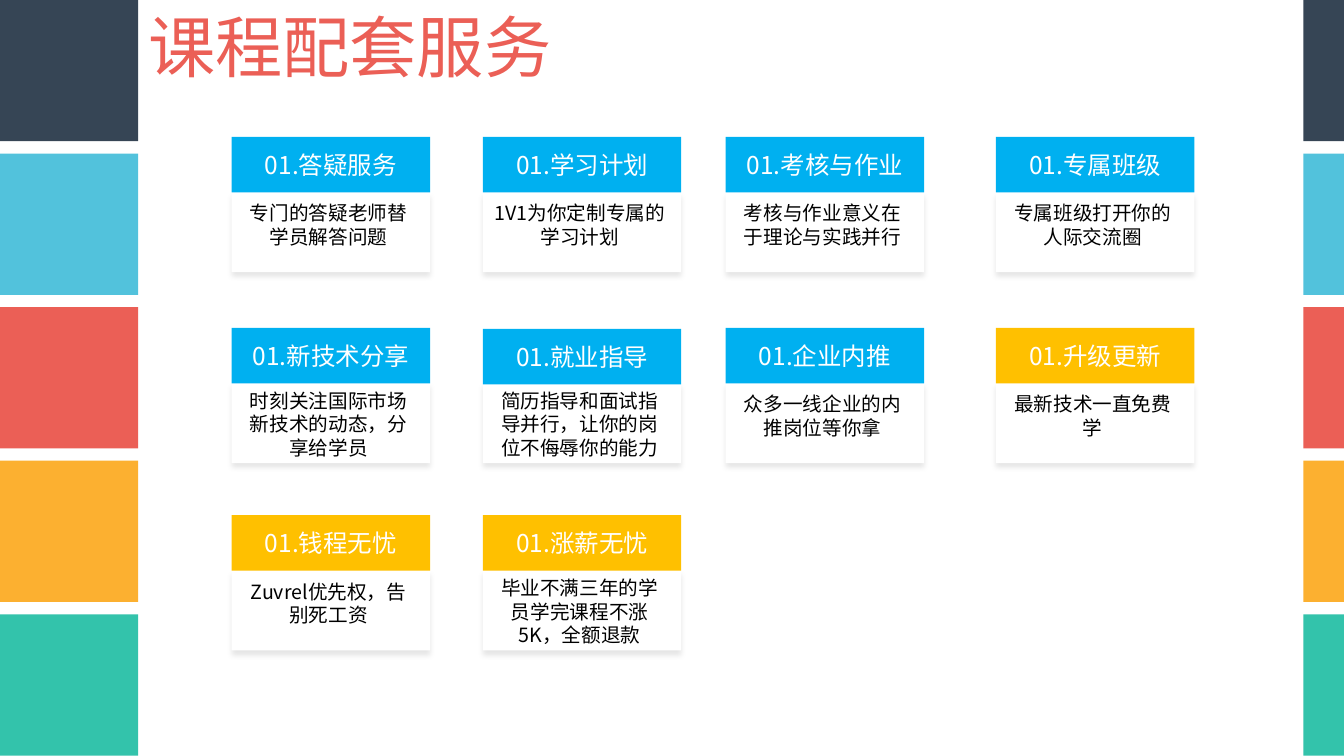
from typing import NamedTuple

from lxml import etree
from pptx import Presentation
from pptx.dml.color import RGBColor
from pptx.enum.shapes import MSO_SHAPE
from pptx.enum.text import MSO_ANCHOR, MSO_AUTO_SIZE, PP_ALIGN
from pptx.oxml.ns import qn
from pptx.util import Cm, Pt

RECT = MSO_SHAPE.RECTANGLE
TOP, MIDDLE = MSO_ANCHOR.TOP, MSO_ANCHOR.MIDDLE
LEFT, CENTER = PP_ALIGN.LEFT, PP_ALIGN.CENTER
FIT, FIXED = MSO_AUTO_SIZE.SHAPE_TO_FIT_TEXT, MSO_AUTO_SIZE.NONE

FONT = "Noto Sans CJK SC"
COLORS = {
    "navy": "364555",
    "sky": "52C2DC",
    "red": "EB5F56",
    "orange": "FCB030",
    "green": "33C3AB",
    "blue": "00B0F0",
    "gold": "FFC000",
    "white": "FFFFFF",
    "black": "000000",
}

BANDS = ["navy", "sky", "red", "orange", "green"]
BAND_STEP, BAND_HIGH = 3.87, 3.56
SIDES = [(0, 3.48), (32.85, 1.02)]

COLS = [5.84, 12.17, 18.29, 25.1]
ROWS = [3.45, 8.26, 12.98]
CARD_WIDE, HEAD_HIGH, CARD_HIGH = 5, 1.4, 2.01
NOTE_WIDE, LONG_NOTE = 4.88, 16


class Box(NamedTuple):
    left: float
    top: float
    width: float
    height: float


class Card(NamedTuple):
    head: str
    note: str
    color: str = "blue"
    drop: float = 0


CARDS = [
    Card("01.答疑服务", "专门的答疑老师替学员解答问题"),
    Card("01.学习计划", "1V1为你定制专属的学习计划"),
    Card("01.考核与作业", "考核与作业意义在于理论与实践并行"),
    Card("01.专属班级", "专属班级打开你的人际交流圈"),
    Card("01.新技术分享", "时刻关注国际市场新技术的动态，分享给学员"),
    Card("01.就业指导", "简历指导和面试指导并行，让你的岗位不侮辱你的能力", drop=0.03),
    Card("01.企业内推", "众多一线企业的内推岗位等你拿"),
    Card("01.升级更新", "最新技术一直免费学", "gold"),
    Card("01.钱程无忧", "Zuvrel优先权，告别死工资", "gold"),
    Card("01.涨薪无忧", "毕业不满三年的学员学完课程不涨5K，全额退款", "gold"),
]


def place(box: Box) -> list:
    return [Cm(side) for side in box]


def add_rect(slide, box: Box, color: str):
    shape = slide.shapes.add_shape(RECT, *place(box))
    shape.shadow.inherit = False
    shape.fill.solid()
    shape.fill.fore_color.rgb = RGBColor.from_string(COLORS[color])
    shape.line.fill.background()
    return shape


def add_shade(shape) -> None:
    effects = shape._element.spPr.find(qn("a:effectLst"))
    shade = etree.SubElement(
        effects, qn("a:outerShdw"), blurRad=str(Pt(4)), dist=str(Pt(3)),
        dir="5400000", algn="t", rotWithShape="0")
    tint = etree.SubElement(shade, qn("a:srgbClr"), val=COLORS["black"])
    etree.SubElement(tint, qn("a:alpha"), val="9000")


def write(shape, text: str, size: float, color: str,
          align=CENTER, anchor=TOP, wrap: bool = True, fit=FIT) -> None:
    frame = shape.text_frame
    frame.text = text
    frame.word_wrap = wrap
    frame.auto_size = fit
    frame.vertical_anchor = anchor
    line = frame.paragraphs[0]
    line.alignment = align
    font = line.font
    font.size = Pt(size)
    font.color.rgb = RGBColor.from_string(COLORS[color])
    font.name = FONT
    latin = line._p.pPr.find(qn("a:defRPr")).find(qn("a:latin"))
    asian = etree.Element(qn("a:ea"), typeface=FONT)
    latin.addnext(asian)


def add_card(slide, card: Card, left: float, top: float) -> None:
    base = add_rect(slide, Box(left, top + HEAD_HIGH, CARD_WIDE, CARD_HIGH), "white")
    add_shade(base)
    head = add_rect(slide, Box(left, top + card.drop, CARD_WIDE, HEAD_HIGH), card.color)
    write(head, card.head, 17.5, "white", anchor=MIDDLE, fit=FIXED)
    down, high = (1.41, 2.06) if len(card.note) > LONG_NOTE else (1.5, 1.45)
    note = slide.shapes.add_textbox(*place(Box(left, top + down, NOTE_WIDE, high)))
    write(note, card.note, 14, "black")


def main() -> None:
    deck = Presentation()
    deck.slide_width, deck.slide_height = Cm(33.87), Cm(19.05)
    slide = deck.slides.add_slide(deck.slide_layouts[5])

    title = slide.shapes.title
    title.left, title.top, title.width, title.height = place(Box(3.48, 0, 10.77, 2.31))
    write(title, "课程配套服务", 48, "red", align=LEFT, wrap=False)

    for left, width in SIDES:
        for step, color in enumerate(BANDS):
            add_rect(slide, Box(left, step * BAND_STEP, width, BAND_HIGH), color)

    for index, card in enumerate(CARDS):
        row, col = divmod(index, len(COLS))
        add_card(slide, card, COLS[col], ROWS[row])

    deck.save("out.pptx")


if __name__ == "__main__":
    main()
